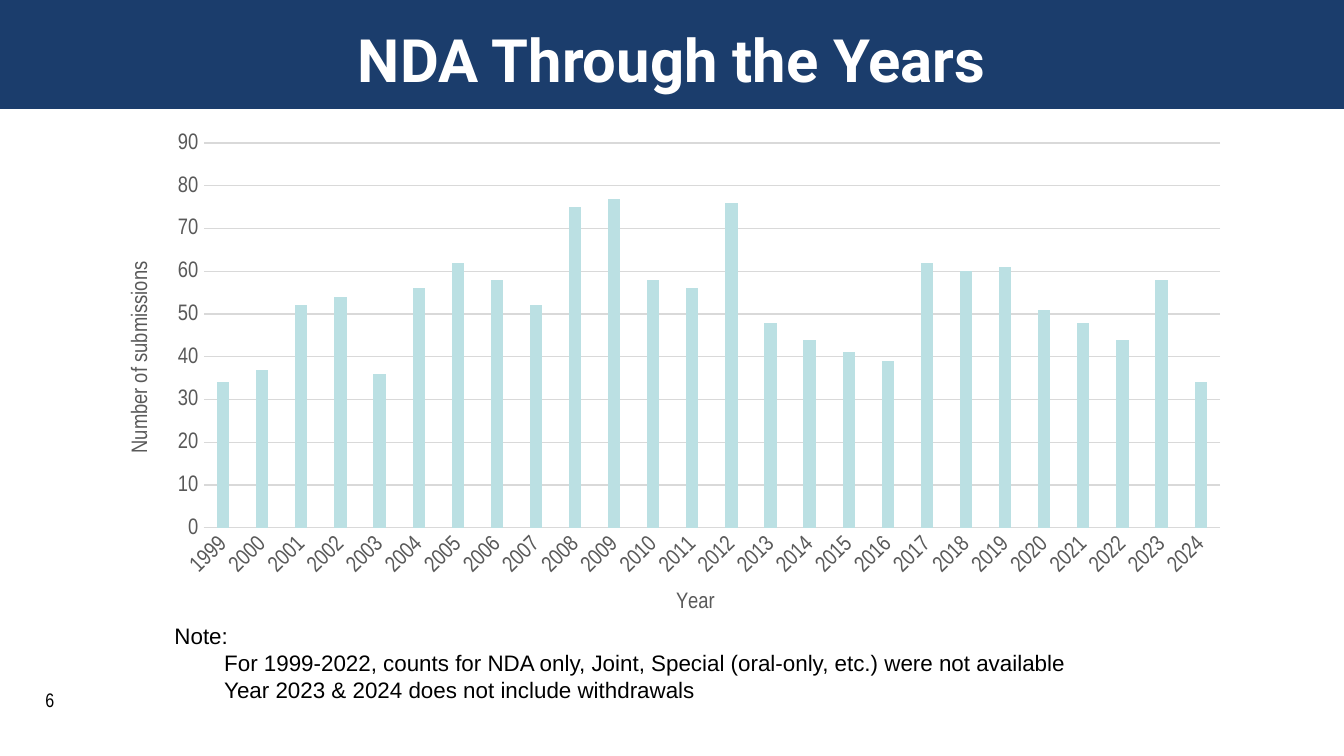
from lxml import etree
from pptx import Presentation
from pptx.chart.data import CategoryChartData
from pptx.dml.color import RGBColor
from pptx.enum.chart import XL_CHART_TYPE as ChartType, XL_TICK_MARK as Tick
from pptx.enum.shapes import MSO_SHAPE as Shape
from pptx.enum.text import MSO_ANCHOR as Anchor, PP_ALIGN as Align
from pptx.oxml.ns import qn
from pptx.util import Inches, Pt

THEME = {
    "navy": RGBColor.from_string("1B3D6C"),
    "white": RGBColor.from_string("FFFFFF"),
    "black": RGBColor.from_string("000000"),
    "gray": RGBColor.from_string("595959"),
    "grid": RGBColor.from_string("D9D9D9"),
    "bar": RGBColor.from_string("BBE0E3"),
    "title_size": Pt(32),
    "text_size": Pt(12),
    "number_size": Pt(10.5),
    "line": Pt(0.75),
}


def write(p, text, font="Arial", size=THEME["text_size"], color=THEME["black"],
          bold=False, align=None, indent=0):
    if indent:
        p._p.get_or_add_pPr().set("marL", str(Inches(indent)))
    if align is not None:
        p.alignment = align
    r = p.add_run()
    r.text = text
    r.font.name = font
    r.font.size = size
    r.font.bold = bold
    r.font.color.rgb = color


def place(element, index, **position):
    for old in element.findall(qn("c:layout")):
        element.remove(old)
    layout = etree.Element(qn("c:layout"))
    manual = etree.SubElement(layout, qn("c:manualLayout"))
    if "w" in position:
        etree.SubElement(manual, qn("c:layoutTarget")).set("val", "inner")
    for mode in ("xMode", "yMode"):
        etree.SubElement(manual, qn(f"c:{mode}")).set("val", "edge")
    for key, value in position.items():
        etree.SubElement(manual, qn(f"c:{key}")).set("val", str(value))
    element.insert(index, layout)


prs = Presentation()
prs.slide_width = Inches(10)
prs.slide_height = Inches(10) * 9 // 16
s = prs.slides.add_slide(prs.slide_layouts[5])

band = s.shapes.add_shape(Shape.RECTANGLE, 0, 0, prs.slide_width, Inches(0.81))
band.shadow.inherit = False
band.fill.solid()
band.fill.fore_color.rgb = THEME["navy"]
band.line.fill.background()
s.shapes._spTree.insert(2, band._element)

title = s.shapes.title
title.left, title.top = Inches(0.25), Inches(0.16)
title.width, title.height = Inches(9.5), Inches(0.56)
title.text_frame.vertical_anchor = Anchor.MIDDLE
write(title.text_frame.paragraphs[0], "NDA Through the Years", font="Roboto",
      size=THEME["title_size"], color=THEME["white"], bold=True, align=Align.CENTER)

number = s.shapes.add_textbox(Inches(0.24), Inches(5.07), Inches(1), Inches(0.19))
number.text_frame.word_wrap = True
write(number.text_frame.paragraphs[0], "6", font="Arial Narrow", size=THEME["number_size"])

note = s.shapes.add_textbox(Inches(1.2), Inches(4.58), Inches(8.6), Inches(0.71))
tf = note.text_frame
tf.word_wrap = True
write(tf.paragraphs[0], "Note:")
for line in (
    "For 1999-2022, counts for NDA only, Joint, Special (oral-only, etc.) were not available",
    "Year 2023 & 2024 does not include withdrawals",
):
    write(tf.add_paragraph(), line, indent=0.37)

data = CategoryChartData()
data.categories = [str(year) for year in range(1999, 2025)]
data.add_series("Series 1", (
    34, 37, 52, 54, 36, 56, 62, 58, 52, 75, 77, 58, 56,
    76, 48, 44, 41, 39, 62, 60, 61, 51, 48, 44, 58, 34,
))
chart = s.shapes.add_chart(ChartType.COLUMN_CLUSTERED, Inches(0.75), Inches(0.91),
                           Inches(8.5), Inches(3.87), data).chart
chart.has_legend = False
chart.has_title = False
chart.font.name = "Arial Narrow"
chart.font.size = THEME["text_size"]
chart.font.color.rgb = THEME["black"]

plot = chart.plots[0]
plot.gap_width = 219
plot.overlap = -27
plot.vary_by_categories = False
fill = plot.series[0].format.fill
fill.solid()
fill.fore_color.rgb = THEME["bar"]

years, counts = chart.category_axis, chart.value_axis
for axis, label, x, y in (
    (years, "Year", 0.5, 0.89),
    (counts, "Number of submissions", 0.02, 0.26),
):
    axis.major_tick_mark = axis.minor_tick_mark = Tick.NONE
    font = axis.tick_labels.font
    font.name = "Arial Narrow"
    font.size = THEME["text_size"]
    font.color.rgb = THEME["gray"]
    write(axis.axis_title.text_frame.paragraphs[0], label, font="Arial Narrow",
          color=THEME["gray"])
    place(axis.axis_title._element, 1, x=x, y=y)

counts.axis_title.text_frame._txBody.bodyPr.set("rot", "-5400000")
counts.axis_title.text_frame._txBody.bodyPr.set("vert", "horz")
years._element.find(qn("c:txPr")).find(qn("a:bodyPr")).set("rot", "-2700000")
counts.minimum_scale, counts.maximum_scale, counts.major_unit = 0, 90, 10
counts.format.line.fill.background()
counts.has_major_gridlines = True
for line in (years.format.line, counts.major_gridlines.format.line):
    line.color.rgb = THEME["grid"]
    line.width = THEME["line"]
place(chart._chartSpace.chart.plotArea, 0, x=0.09, y=0.04, w=0.89, h=0.74)

prs.save("out.pptx")
